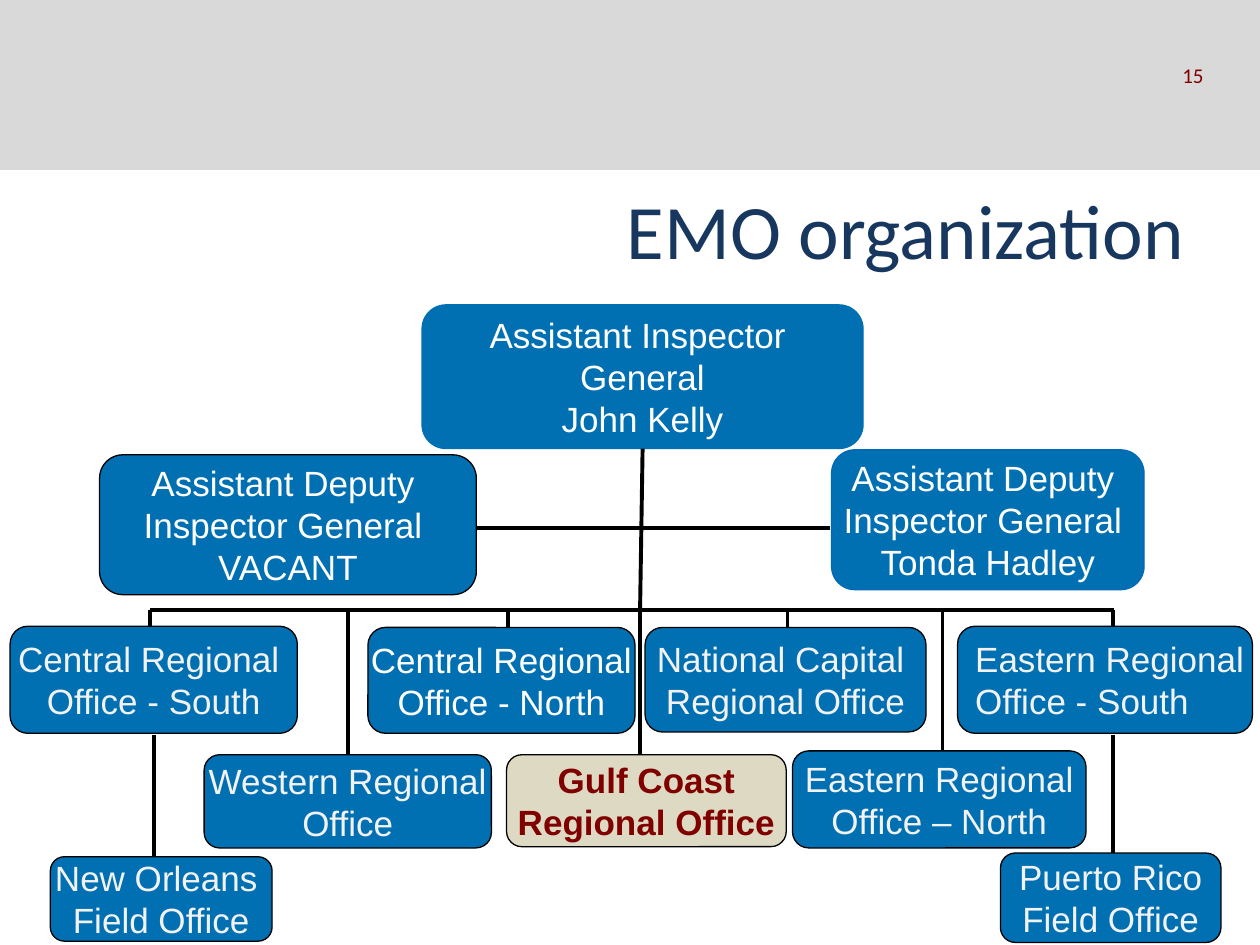
from lxml import etree
from pptx import Presentation
from pptx.dml.color import RGBColor
from pptx.enum.shapes import MSO_CONNECTOR, MSO_SHAPE
from pptx.enum.text import MSO_ANCHOR, PP_ALIGN
from pptx.oxml.ns import qn
from pptx.util import Inches, Pt

GRAY = RGBColor(0xD9, 0xD9, 0xD9)
WHITE = RGBColor(0xFF, 0xFF, 0xFF)
PALE = RGBColor(0xF2, 0xF2, 0xF2)
BLACK = RGBColor(0, 0, 0)
NAVY = RGBColor(0x17, 0x37, 0x5E)
RED = RGBColor(0x80, 0, 0)
BLUE = RGBColor(0, 0x70, 0xB2)
EDGE = RGBColor(0, 0x69, 0xB8)
TAN = RGBColor(0xDD, 0xD9, 0xC3)

BUS = 4.84  # height of the bar that joins the offices

# Leaders: text, left, top, width, height, edge
LEADERS = [
    ("Assistant Deputy \nInspector General \nTonda Hadley", 6.6, 3.57, 2.48, 1.11, EDGE),
    ("Assistant Inspector \nGeneral\nJohn Kelly", 3.35, 2.42, 3.5, 1.14, BLUE),
    ("Assistant Deputy \nInspector General \nVACANT", 0.79, 3.61, 2.99, 1.11, BLACK),
]

# Offices: text, left, top, width, height, font colour, x of the line from the bar
OFFICES = [
    ("Central Regional \nOffice - South", 0.08, 4.97, 2.28, 0.85, PALE, 1.19),
    ("Central Regional\nOffice - North", 2.92, 4.98, 2.12, 0.84, WHITE, 4.03),
    ("National Capital \nRegional Office", 5.12, 4.98, 2.23, 0.83, PALE, 6.25),
    ("Eastern Regional\nOffice - South", 7.6, 4.97, 2.34, 0.85, PALE, 8.83),
    ("Western Regional\nOffice", 1.62, 5.99, 2.28, 0.74, PALE, 2.76),
    ("Gulf Coast\nRegional Office", 4.02, 5.99, 2.22, 0.73, RED, 5.08),
    ("Eastern Regional\nOffice – North", 6.29, 5.96, 2.33, 0.77, PALE, 7.48),
]

# Field offices: text, left, top, width, height, x of the line from above
FIELDS = [
    ("New Orleans \nField Office", 0.4, 6.8, 1.76, 0.67, 1.22),
    ("Puerto Rico\nField Office", 7.94, 6.77, 1.75, 0.71, 8.83),
]


def write(shape, text, font, size, color, align, bold=False):
    frame = shape.text_frame
    frame.text = text
    frame.vertical_anchor = MSO_ANCHOR.MIDDLE
    for para in frame.paragraphs:
        para.alignment = align
        for run in para.runs:
            run.font.name = font
            run.font.size = Pt(size)
            run.font.bold = bold
            run.font.color.rgb = color


def add_panel(slide, top, height, color):
    panel = slide.shapes.add_shape(
        MSO_SHAPE.RECTANGLE, 0, Inches(top), Inches(10), Inches(height))
    panel.shadow.inherit = False
    panel.fill.solid()
    panel.fill.fore_color.rgb = color
    panel.line.fill.background()


def add_label(slide, text, left, top, width, height, size, color):
    label = slide.shapes.add_textbox(
        Inches(left), Inches(top), Inches(width), Inches(height))
    label.text_frame.word_wrap = True
    write(label, text, "Calibri", size, color, PP_ALIGN.RIGHT)


def add_box(slide, text, left, top, width, height, color,
            fill=BLUE, edge=BLACK, align=PP_ALIGN.CENTER, bold=False):
    box = slide.shapes.add_shape(
        MSO_SHAPE.ROUNDED_RECTANGLE,
        Inches(left), Inches(top), Inches(width), Inches(height))
    box.shadow.inherit = False
    box.fill.solid()
    box.fill.fore_color.rgb = fill
    box.line.color.rgb = edge
    box.line.width = Pt(0.75)
    box.text_frame.word_wrap = False
    write(box, text, "Arial", 20, color, align, bold)


def add_line(slide, x1, y1, x2, y2):
    line = slide.shapes.add_connector(
        MSO_CONNECTOR.STRAIGHT, Inches(x1), Inches(y1), Inches(x2), Inches(y2))
    line.line.color.rgb = BLACK
    line.line.width = Pt(2.25)
    etree.SubElement(line._element.spPr, qn("a:effectLst"))


def main():
    deck = Presentation()
    deck.slide_width, deck.slide_height = Inches(10), Inches(7.5)
    slide = deck.slides.add_slide(deck.slide_layouts[6])

    # Gray header over a white page
    add_panel(slide, 0, 7.5, GRAY)
    add_panel(slide, 1.35, 5.41, WHITE)
    add_panel(slide, 6.03, 1.47, WHITE)

    # Title and page number
    add_label(slide, "EMO organization", 0.5, 1.32, 9, 0.99, 44, NAVY)
    add_label(slide, "15", 8.53, 0.21, 1.12, 0.77, 12, RED)

    # Leaders and the lines between them
    for text, left, top, width, height, edge in LEADERS:
        add_box(slide, text, left, top, width, height, WHITE, edge=edge)
    add_line(slide, 5.1, 3.56, 5.08, BUS)
    add_line(slide, 6.59, 4.19, 3.78, 4.19)

    # Regional offices below the bar
    add_line(slide, 8.84, BUS, 1.19, BUS)
    for text, left, top, width, height, color, x in OFFICES:
        gulf = color == RED
        east = text.startswith("Eastern") and text.endswith("South")
        add_line(slide, x, BUS, x, top)
        add_box(slide, text, left, top, width, height, color,
                fill=TAN if gulf else BLUE, bold=gulf,
                align=PP_ALIGN.LEFT if east else PP_ALIGN.CENTER)

    # Field offices
    for text, left, top, width, height, x in FIELDS:
        add_box(slide, text, left, top, width, height, PALE)
        add_line(slide, x, 5.83, x, top)

    deck.save("out.pptx")


if __name__ == "__main__":
    main()
